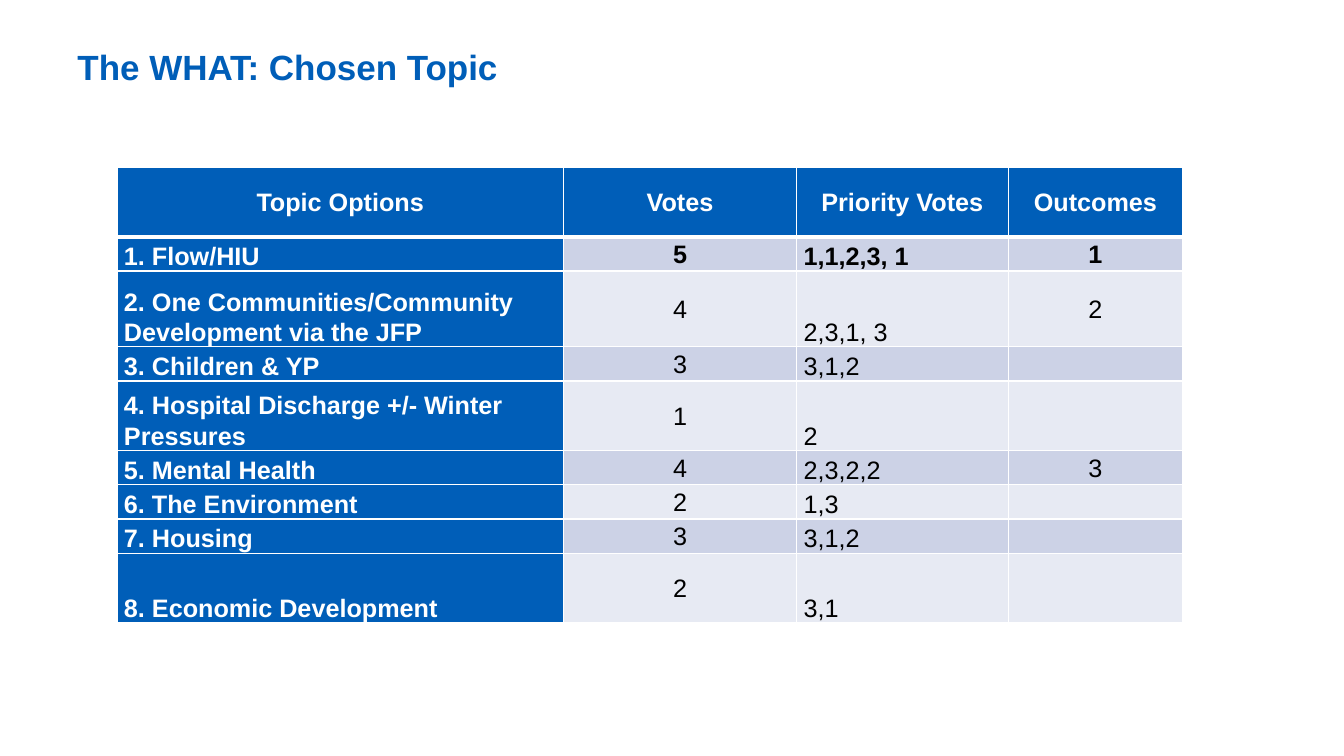
from lxml.etree import SubElement
from pptx import Presentation
from pptx.dml.color import RGBColor
from pptx.enum.text import MSO_ANCHOR, PP_ALIGN
from pptx.oxml.ns import qn
from pptx.util import Inches, Pt

COLORS = {
    "blue": "005EB8",
    "white": "FFFFFF",
    "black": "000000",
    "dark_band": "CCD2E6",
    "light_band": "E7EAF3",
}
FONT = "Arial"
COLUMN_WIDTHS = [4.43, 2.31, 2.1, 1.73]
ROW_HEIGHTS = [0.69, 0.34, 0.75, 0.34, 0.69, 0.34, 0.34, 0.34, 0.69]
TOPIC_ROWS = [
    ["Topic Options", "Votes", "Priority Votes", "Outcomes"],
    ["1. Flow/HIU", "5", "1,1,2,3, 1", "1"],
    ["2. One Communities/Community Development via the JFP", "4", "2,3,1, 3", "2"],
    ["3. Children & YP", "3", "3,1,2", ""],
    ["4. Hospital Discharge +/- Winter Pressures", "1", "2", ""],
    ["5. Mental Health", "4", "2,3,2,2", "3"],
    ["6. The Environment", "2", "1,3", ""],
    ["7. Housing", "3", "3,1,2", ""],
    ["8. Economic Development", "2", "3,1", ""],
]


def add_run(paragraph, text, size, color, bold):
    """Add one styled run to a paragraph."""
    run = paragraph.add_run()
    run.text = text
    run.font.name = FONT
    run.font.size = Pt(size)
    run.font.bold = bold
    run.font.color.rgb = RGBColor.from_string(COLORS[color])


def add_title(slide, left, top, width, height):
    """Place the slide title in the given box."""
    frame = slide.shapes.add_textbox(
        Inches(left), Inches(top), Inches(width), Inches(height)
    ).text_frame
    frame.word_wrap = True
    frame.vertical_anchor = MSO_ANCHOR.MIDDLE
    add_run(frame.paragraphs[0], "The WHAT: Chosen Topic", 25, "blue", True)


def set_borders(cell, top_width, bottom_width):
    """Draw white borders around a cell, ahead of its fill."""
    properties = cell._tc.get_or_add_tcPr()
    widths = {"lnL": 1, "lnR": 1, "lnT": top_width, "lnB": bottom_width}
    for side, width in widths.items():
        line = SubElement(properties, qn(f"a:{side}"), w=str(Pt(width)))
        fill = SubElement(line, qn("a:solidFill"))
        SubElement(fill, qn("a:srgbClr"), val=COLORS["white"])


def style_cell(cell, text, row, column):
    """Fill, border and write one cell according to its row and column."""
    is_header = row == 0
    is_label = is_header or column == 0
    set_borders(cell, 3 if row == 1 else 1, 3 if is_header else 1)
    band = "dark_band" if row % 2 else "light_band"
    cell.fill.solid()
    cell.fill.fore_color.rgb = RGBColor.from_string(
        COLORS["blue" if is_label else band]
    )
    cell.margin_left = cell.margin_right = Inches(0.07)
    cell.margin_top = cell.margin_bottom = 0
    centred = is_header or column in (1, 3)
    cell.vertical_anchor = MSO_ANCHOR.MIDDLE if centred else MSO_ANCHOR.BOTTOM
    paragraph = cell.text_frame.paragraphs[0]
    paragraph.alignment = PP_ALIGN.CENTER if centred else PP_ALIGN.LEFT
    paragraph.line_spacing = 1.07
    if text:
        color = "white" if is_label else "black"
        add_run(paragraph, text, 18, color, is_label or row == 1)


def add_topic_table(slide, left, top, width, height):
    """Place the table of topics and votes in the given box."""
    table = slide.shapes.add_table(
        len(TOPIC_ROWS), len(COLUMN_WIDTHS),
        Inches(left), Inches(top), Inches(width), Inches(height),
    ).table
    for column, column_width in zip(table.columns, COLUMN_WIDTHS):
        column.width = Inches(column_width)
    for row, row_height in zip(table.rows, ROW_HEIGHTS):
        row.height = Inches(row_height)
    for row, texts in enumerate(TOPIC_ROWS):
        for column, text in enumerate(texts):
            style_cell(table.cell(row, column), text, row, column)


def main():
    """Build the slide and save it."""
    presentation = Presentation()
    presentation.slide_width = Inches(13.33)
    presentation.slide_height = Inches(7.5)
    slide = presentation.slides.add_slide(presentation.slide_layouts[6])
    add_title(slide, 0.67, 0.3, 12, 0.72)
    add_topic_table(slide, 1.16, 1.66, sum(COLUMN_WIDTHS), sum(ROW_HEIGHTS))
    presentation.save("out.pptx")


if __name__ == "__main__":
    main()
